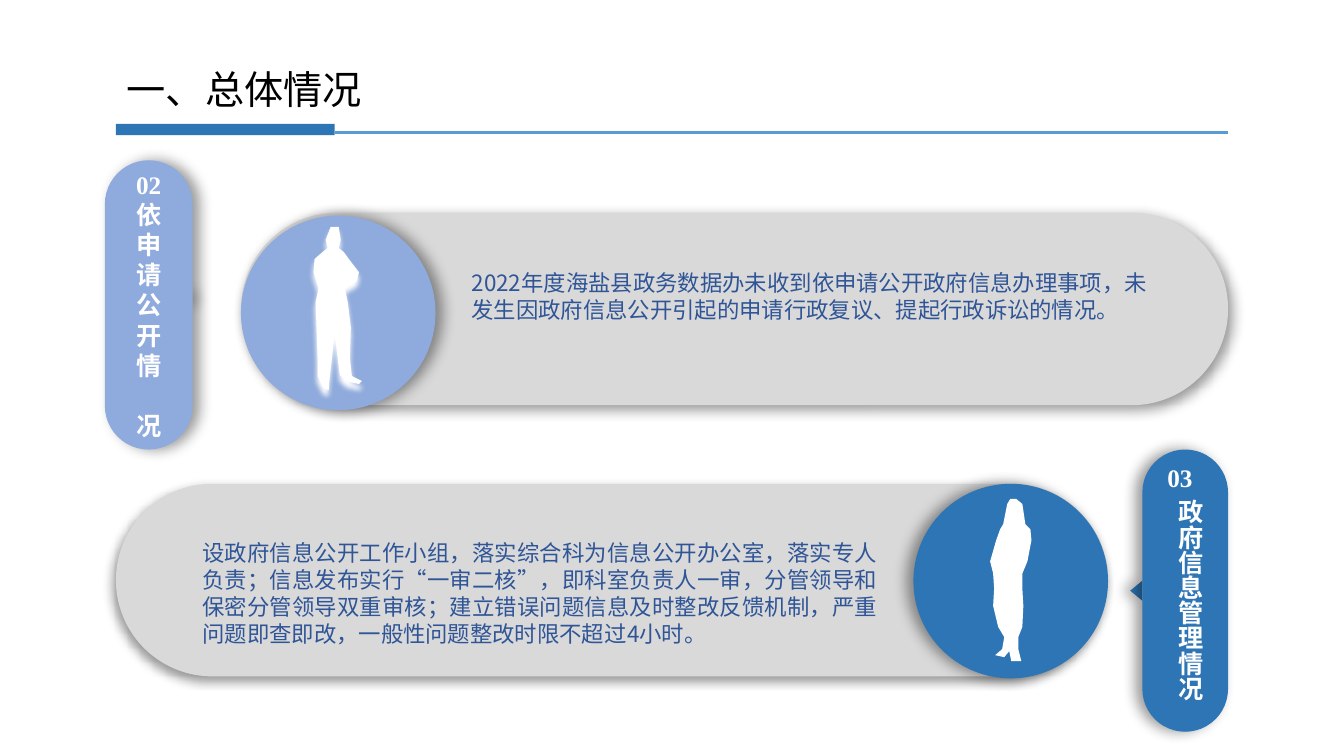
from lxml import etree
from pptx import Presentation
from pptx.dml.color import RGBColor
from pptx.enum.shapes import MSO_CONNECTOR, MSO_SHAPE as Preset
from pptx.enum.text import MSO_ANCHOR as Anchor, PP_ALIGN as Align
from pptx.oxml.ns import qn
from pptx.util import Inches, Pt

# Grid: 1333 columns by 750 rows of equal cells
CELL = Inches(0.01)
COLUMNS, ROWS = 1333, 750
LEFT, RIGHT = 115, 1218
ACCENT, RULE_ROW = 217, 131.5
DISC, PILL = 193, 191

BLUE = RGBColor(0x2E, 0x75, 0xB6)
RULE_BLUE = RGBColor(0x5B, 0x9B, 0xD5)
PALE_BLUE = RGBColor(0x8F, 0xAA, 0xDC)
TEXT_BLUE = RGBColor(0x2F, 0x55, 0x97)
GREY = RGBColor(0xD9, 0xD9, 0xD9)
WHITE = RGBColor(0xFF, 0xFF, 0xFF)
BLACK = RGBColor(0x00, 0x00, 0x00)
SANS, SERIF = "Noto Sans CJK SC", "Times New Roman"


def paint(shape, fill, shadow=None, tint=BLACK, opacity=40):
    """Fill a shape; shadow is (blur pt, distance pt, direction in degrees)."""
    shape.fill.solid()
    shape.fill.fore_color.rgb = fill
    shape.line.fill.background()
    shape.shadow.inherit = False
    if shadow:
        blur, distance, angle = shadow
        effects = shape._element.spPr.find(qn("a:effectLst"))
        outer = etree.SubElement(effects, qn("a:outerShdw"), blurRad=str(Pt(blur)),
                                 dist=str(Pt(distance)), dir=str(angle * 60000),
                                 algn="ctr", rotWithShape="0")
        color = etree.SubElement(outer, qn("a:srgbClr"), val=str(tint))
        etree.SubElement(color, qn("a:alpha"), val=str(opacity * 1000))


def write(frame, text, size, color, font=SANS, bold=False, align=Align.LEFT,
          anchor=Anchor.TOP, wrap=True, pitch=None, gap=0):
    """Write one paragraph per line; pitch is the line height, gap the space between."""
    frame.word_wrap = wrap
    frame.vertical_anchor = anchor
    for number, line in enumerate(text.split("\n")):
        paragraph = frame.add_paragraph() if number else frame.paragraphs[0]
        paragraph.alignment = align
        if pitch:
            paragraph.line_spacing = Pt(pitch)
        paragraph.space_before = Pt(gap if number else 0)
        run = paragraph.add_run()
        run.text = line
        run.font.size, run.font.bold, run.font.name = Pt(size), bold, font
        run.font.color.rgb = color
        properties = run.font._element
        properties.set("lang", "zh-CN")
        etree.SubElement(properties, qn("a:ea"), typeface=SANS)


deck = Presentation()
deck.slide_width, deck.slide_height = COLUMNS * CELL, ROWS * CELL
slide = deck.slides.add_slide(deck.slide_layouts[6])
shapes = slide.shapes

# Heading with its accent bar and rule
accent = shapes.add_shape(Preset.RECTANGLE, LEFT * CELL, 123 * CELL, ACCENT * CELL, 11 * CELL)
paint(accent, BLUE)
rule_y = round(RULE_ROW * CELL)
rule = shapes.add_connector(MSO_CONNECTOR.STRAIGHT, (LEFT + ACCENT) * CELL, rule_y,
                            RIGHT * CELL, rule_y)
rule.line.color.rgb = RULE_BLUE
rule.line.width = Pt(2.25)
etree.SubElement(rule._element.spPr, qn("a:effectLst"))
heading = shapes.add_textbox(116 * CELL, 60 * CELL, 253 * CELL, 104 * CELL)
write(heading.text_frame, "一、总体情况", 28, BLACK, wrap=False, pitch=33.5)

# Figures: each body level is (depth, left edge, right edge); feet run left to right
man = dict(
    corner=(311, 225), glow=(4, 4, 90),
    levels=dict(crown=(0, 17, 25), ears=(13, 12, 27), chin=(21, 14, 25),
                collar=(25, 9, 30), shoulders=(32, 1, 35), elbows=(45, 0, 45),
                forearms=(54, 3, 43), waist=(61, 5, 31), hips=(75, 2, 34),
                thighs=(100, 3, 37), knees=(130, 4, 36), ankles=(148, 4, 38)),
    feet=[(10, 160), (15, 162), (16, 150), (21, 106), (26, 147), (32, 153),
          (45, 156), (48, 153)])
woman = dict(
    corner=(982, 494), glow=None,
    levels=dict(crown=(1, 20, 26), brow=(6, 17, 32), hair=(26, 13, 35),
                shoulders=(31, 10, 40), elbows=(42, 6, 41), wrists=(63, 0, 37),
                waist=(75, 3, 32), hips=(90, 4, 32), skirt=(107, 3, 33),
                hem=(128, 8, 32), calves=(138, 14, 28), ankles=(150, 12, 28)),
    feet=[(5, 156), (14, 158), (19, 152), (21, 162), (31, 162)])

# The two sections: the first opens to the right, the second mirrors it
sections = [
    dict(color=PALE_BLUE, angle=0, figure=man,
         tab=(104, 159, 87, 287), pointer=(176, 291, 18, 10), turn=90,
         pill=(239, 211, 979, PILL), pill_shadow=(9, 4, 45), disc=(239, 214),
         story=(458, 262, 690, 64),
         text="2022年度海盐县政务数据办未收到依申请公开政府信息办理事项，"
              "未发生因政府信息公开引起的申请行政复议、提起行政诉讼的情况。"),
    dict(color=BLUE, angle=180, figure=woman,
         tab=(1133, 446, 85, 280), pointer=(1117, 580, 20, 12), turn=270,
         pill=(LEFT, 480, 984, PILL), pill_shadow=(7, 4, 135), disc=(906, 480),
         story=(191, 530, 690, 118),
         text="设政府信息公开工作小组，落实综合科为信息公开办公室，落实专人负责；"
              "信息发布实行“一审二核”，即科室负责人一审，分管领导和保密分管领导"
              "双重审核；建立错误问题信息及时整改反馈机制，严重问题即查即改，"
              "一般性问题整改时限不超过4小时。"),
]
label = dict(size=18, color=WHITE, font=SERIF, bold=True)
tabs = []
for section in sections:
    color, shadow = section["color"], (10, 5, section["angle"])

    # Pointer, tab, pill and disc, from back to front
    pointer = shapes.add_shape(Preset.ISOSCELES_TRIANGLE,
                               *(cells * CELL for cells in section["pointer"]))
    pointer.rotation = section["turn"]
    paint(pointer, color, shadow)
    for place, fill, cast in [(section["tab"], color, shadow),
                              (section["pill"], GREY, section["pill_shadow"])]:
        rounded = shapes.add_shape(Preset.ROUNDED_RECTANGLE, *(cells * CELL for cells in place))
        rounded.adjustments[0] = 0.5
        paint(rounded, fill, cast)
        if place == section["tab"]:
            tabs.append(rounded)
    disc = shapes.add_shape(Preset.OVAL,
                            *(cells * CELL for cells in (*section["disc"], DISC, DISC)))
    paint(disc, color, shadow)

    # Figure outline: down the left edge, along the feet, up the right edge
    figure = section["figure"]
    levels = list(figure["levels"].values())
    left_edge = [(left, depth) for depth, left, right in levels]
    right_edge = [(right, depth) for depth, left, right in reversed(levels)]
    x, y = figure["corner"]
    outline = [(x + across, y + down)
               for across, down in left_edge + figure["feet"] + right_edge]
    builder = shapes.build_freeform(*outline[0], scale=CELL)
    builder.add_line_segments(outline[1:], close=True)
    paint(builder.convert_to_shape(), WHITE, figure["glow"], tint=WHITE, opacity=100)

    story = shapes.add_textbox(*(cells * CELL for cells in section["story"]))
    write(story.text_frame, section["text"], 16, TEXT_BLUE, align=Align.JUSTIFY, pitch=19.2)

# Tab labels: the first stacks by wrapping, the second is set vertically
write(tabs[0].text_frame, "02依申请公开情\n况", align=Align.CENTER, anchor=Anchor.MIDDLE,
      pitch=21.6, gap=21.6, **label)
number = shapes.add_textbox(1148 * CELL, 454 * CELL, 67 * CELL, 40 * CELL)
write(number.text_frame, "03", **label)
topic = shapes.add_textbox(1119 * CELL, 486 * CELL, 81 * CELL, 387 * CELL)
write(topic.text_frame, "政府信息管理情况", **label)
topic.text_frame._txBody.bodyPr.set("vert", "eaVert")

deck.save("out.pptx")
